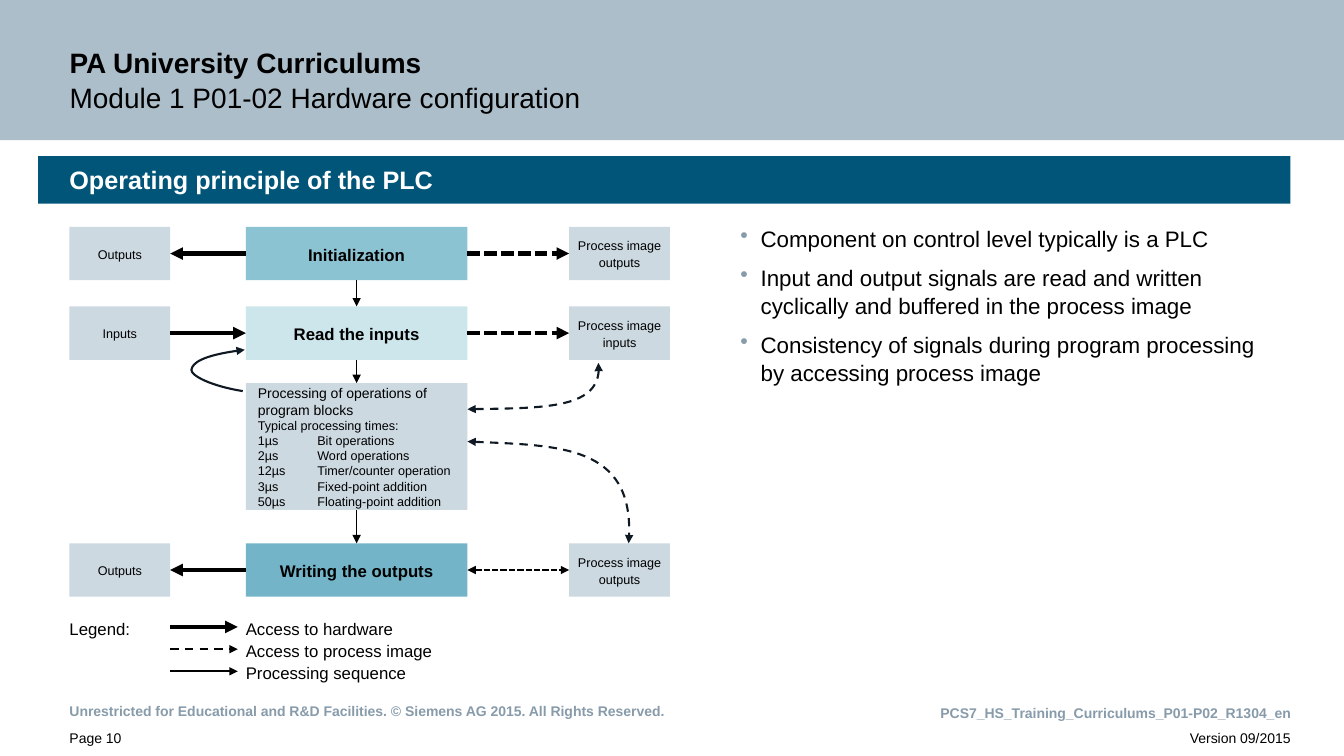
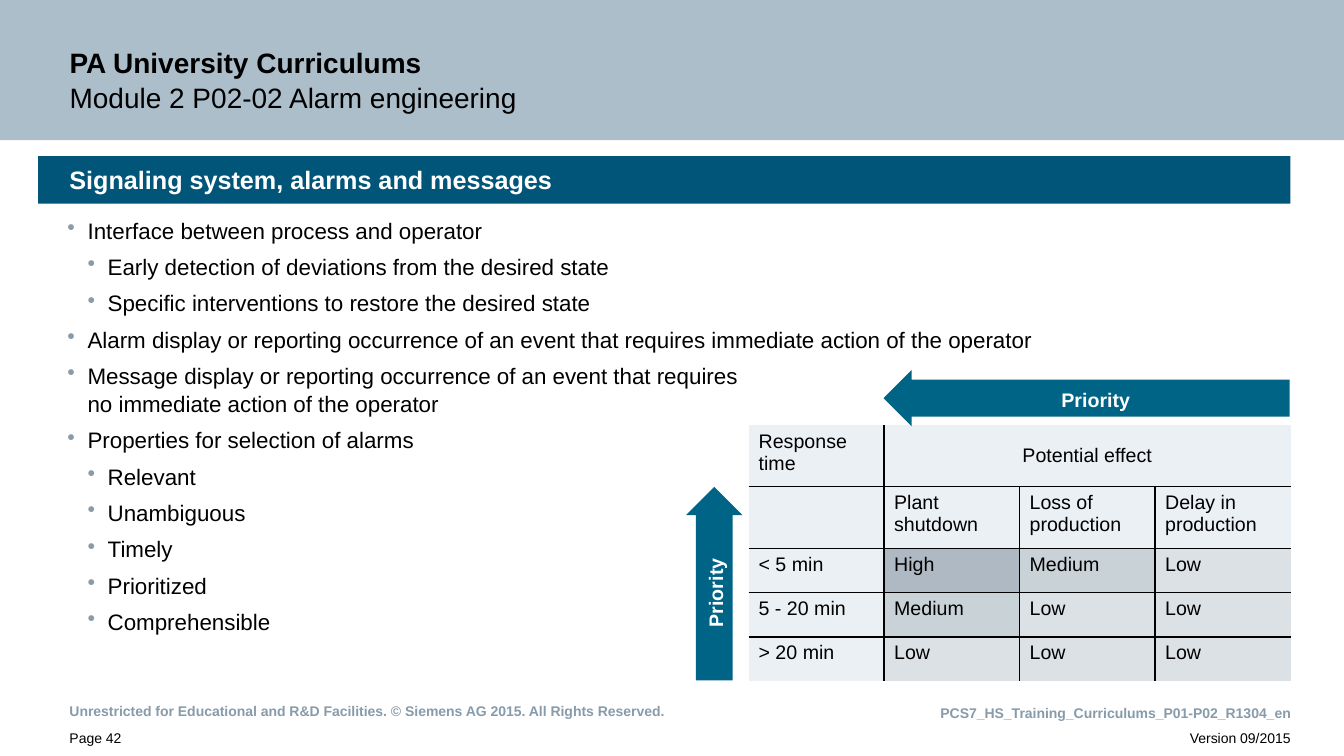
from dataclasses import dataclass, replace
from copy import deepcopy
from typing import NamedTuple, Optional

import lxml.etree
import pptx
import pptx.dml.color
import pptx.enum.dml
import pptx.enum.shapes
import pptx.enum.text
import pptx.oxml.ns
import pptx.util

Inches = pptx.util.Inches
Pt = pptx.util.Pt
RGB = pptx.dml.color.RGBColor
Align = pptx.enum.text.PP_ALIGN
Anchor = pptx.enum.text.MSO_ANCHOR
Preset = pptx.enum.shapes.MSO_SHAPE
Dash = pptx.enum.dml.MSO_LINE
qn = pptx.oxml.ns.qn

# Colours
BLACK, WHITE = RGB(0, 0, 0), RGB(255, 255, 255)
HEADER, BANNER = RGB(0xAD, 0xBE, 0xCB), RGB(0x00, 0x55, 0x78)
MUTED, PALE_BOX = RGB(0x87, 0x9B, 0xAA), RGB(0xCD, 0xD9, 0xE1)
INIT, READ, WRITE = RGB(0x8C, 0xC3, 0xD2), RGB(0xCD, 0xE6, 0xEB), RGB(0x73, 0xB4, 0xC8)
CURVE, ARROW = RGB(0x0F, 0x19, 0x23), RGB(0x00, 0x64, 0x87)
CELL = RGB(0xEB, 0xF0, 0xF5)
PRIORITY_FILL = {"High": RGB(0xAF, 0xB9, 0xC3), "Medium": RGB(0xC8, 0xD2, 0xD7),
                 "Low": RGB(0xDC, 0xE1, 0xE6)}

WIDTH, HEIGHT, HEADER_H = 13.34, 7.5, 1.39
BOX_INSETS = (0.12, 0.06, 0.12, 0.06)
NO_INSETS = (0, 0, 0, 0)
TOP, LEFT, BOTTOM, RIGHT = range(4)


@dataclass(frozen=True)
class Style:
    size: float
    color: RGB = BLACK
    bold: bool = False
    align: Align = Align.LEFT
    spacing: float = 1.0
    before: float = 0


class Bullet(NamedTuple):
    text: str
    level: int = 1


class Box(NamedTuple):
    name: str
    text: str
    at: tuple
    fill: RGB
    style: Style
    insets: tuple = BOX_INSETS


class Link(NamedTuple):
    begin: str
    begin_side: int
    end: str
    end_side: int
    width: float
    dash: Optional[Dash] = None
    both: bool = False


class Curve(NamedTuple):
    start: tuple
    points: tuple
    dash: Optional[Dash] = None
    both: bool = False


FOOTER = Style(10, spacing=1.1)
CREDIT = Style(10, MUTED, True)
STEP = Style(12, bold=True, align=Align.CENTER, spacing=1.1)
SIDE = replace(STEP, size=9, bold=False)
LEGEND = Style(12, spacing=1.1)
PRIORITY = Style(14, WHITE, True, Align.CENTER, 1.1)


# Text
def style_paragraph(p, style: Style) -> None:
    p.alignment, p.line_spacing = style.align, style.spacing
    p.space_before = Pt(style.before)
    for r in p.runs:
        r.font.name, r.font.size, r.font.bold = "Arial", Pt(style.size), style.bold
        r.font.color.rgb = style.color
    for br in p._p.findall(qn("a:br")):
        br.append(deepcopy(p.runs[0]._r.rPr))


def put_text(sp, text: str, style: Style, insets: tuple = NO_INSETS,
             anchor: Anchor = Anchor.TOP, wrap: bool = True):
    tf = sp.text_frame
    tf.text = text
    tf.word_wrap, tf.vertical_anchor = wrap, anchor
    tf.auto_size = pptx.enum.text.MSO_AUTO_SIZE.NONE
    tf.margin_left, tf.margin_top, tf.margin_right, tf.margin_bottom = map(Inches, insets)
    for p in tf.paragraphs:
        style_paragraph(p, style)
    return tf


def add_text(s, at: tuple, text: str, style: Style, **options):
    return put_text(s.shapes.add_textbox(*map(Inches, at)), text, style, **options)


def add_bullets(s, at: tuple, bullets: list, style: Style, insets: tuple) -> None:
    tf = add_text(s, at, "\n".join(b.text for b in bullets), style, insets=insets)
    tf.paragraphs[0].space_before = Pt(0)
    for p, bullet in zip(tf.paragraphs, bullets):
        p.level = bullet.level
        pPr = p._p.get_or_add_pPr()
        pPr.set("marL", str(Inches(0.2 * bullet.level)))
        pPr.set("indent", str(-Inches(0.2)))
        clr = lxml.etree.SubElement(pPr, qn("a:buClr"))
        lxml.etree.SubElement(clr, qn("a:srgbClr"), val=str(MUTED))
        lxml.etree.SubElement(pPr, qn("a:buChar"), char="•")


# Shapes and lines
def add_filled(s, at: tuple, fill: RGB, preset: Preset = Preset.RECTANGLE):
    sp = s.shapes.add_shape(preset, *map(Inches, at))
    sp.shadow.inherit = False
    sp.fill.solid()
    sp.fill.fore_color.rgb = fill
    sp.line.fill.background()
    return sp


def style_arrow(line, color: RGB, width: float, dash: Optional[Dash], both: bool) -> None:
    line.color.rgb, line.width = color, Pt(width)
    if dash is not None:
        line.dash_style = dash
    ln = line._get_or_add_ln()
    for end in ("a:headEnd", "a:tailEnd") if both else ("a:tailEnd",):
        lxml.etree.SubElement(ln, qn(end), type="triangle")


def add_arrow(s, start: tuple, end: tuple, width: float, dash: Optional[Dash] = None,
              both: bool = False):
    line = s.shapes.add_connector(pptx.enum.shapes.MSO_CONNECTOR.STRAIGHT,
                                  *map(Inches, start + end))
    style_arrow(line.line, BLACK, width, dash, both)
    lxml.etree.SubElement(line._element.spPr, qn("a:effectLst"))
    return line


def add_curve(s, curve: Curve) -> None:
    builder = s.shapes.build_freeform(*map(Inches, curve.start))
    builder.add_line_segments([tuple(map(Inches, pt)) for pt in curve.points], close=False)
    sp = builder.convert_to_shape()
    sp.shadow.inherit = False
    sp.fill.background()
    style_arrow(sp.line, CURVE, 1.5, curve.dash, curve.both)
    # Every three segments become the control points of one Bézier curve
    outline = sp._element.spPr.find(".//" + qn("a:path"))
    for i, segment in enumerate(outline.findall(qn("a:lnTo"))):
        if i % 3 == 0:
            bezier = lxml.etree.SubElement(outline, qn("a:cubicBezTo"))
        bezier.append(segment[0])
        outline.remove(segment)


# Frame shared by the slides
def add_slide(prs, module: str, heading: str, page: int):
    s = prs.slides.add_slide(prs.slide_layouts[5])
    title = s.shapes.title
    header_at = (0, 0, WIDTH, HEADER_H)
    title.left, title.top, title.width, title.height = map(Inches, header_at)
    tf = put_text(title, f"PA University Curriculums\v{module}", Style(20, bold=True, spacing=1.05),
                  (0.69, 0.43, 2.32, 0.26), Anchor.BOTTOM)
    tf.paragraphs[0].runs[1].font.bold = False
    band = add_filled(s, header_at, HEADER)
    title._element.addprevious(band._element)

    put_text(add_filled(s, (0.38, 1.55, 12.43, 0.47), BANNER), heading,
             Style(18, WHITE, True), (0.31, 0, 0.08, 0), Anchor.MIDDLE)

    add_text(s, (0, 6.74, WIDTH, 0.47),
             "Unrestricted for Educational and R&D Facilities. © Siemens AG 2015. "
             "All Rights Reserved.", CREDIT, insets=(0.69, 0.16, 3.51, 0), anchor=Anchor.MIDDLE)
    add_text(s, (9.3, 6.97, 3.51, 0.17), "PCS7_HS_Training_Curriculums_P01-P02_R1304_en",
             replace(CREDIT, align=Align.RIGHT, spacing=1.1), wrap=False)
    add_text(s, (0, 7.22, 1.93, 0.28), f"Page {page}", FOOTER, insets=(0.69, 0, 0, 0.13))
    add_text(s, (4.14, 7.22, 9.2, 0.28), "Version 09/2015",
             replace(FOOTER, align=Align.RIGHT), insets=(0, 0, 0.53, 0.13))
    return s


def build_plc_slide(prs) -> None:
    s = add_slide(prs, "Module 1 P01-02 Hardware configuration",
                  "Operating principle of the PLC", 10)
    add_bullets(s, (7.27, 2.02, 5.54, 2.03), [
        Bullet("Component on control level typically is a PLC"),
        Bullet("Input and output signals are read and written cyclically and buffered "
               "in the process image"),
        Bullet("Consistency of signals during program processing by accessing process image"),
    ], Style(16, spacing=1.04, before=8), (0.08, 0.2, 0.12, 0.12))

    # Flow boxes: hardware, step and process image in each row
    rows = [("init", 2.25, "Outputs", "Initialization", INIT, "outputs"),
            ("read", 3.04, "Inputs", "Read the inputs", READ, "inputs"),
            ("write", 5.39, "Outputs", "Writing the outputs", WRITE, "outputs")]
    boxes = []
    for name, y, hardware, step, fill, image in rows:
        boxes += [
            Box(name, step, (2.44, y, 2.2, 0.53), fill, STEP),
            Box(name + " hardware", hardware, (0.69, y, 1, 0.53), PALE_BOX, SIDE),
            Box(name + " image", f"Process image\v{image}", (5.65, y, 1, 0.53), PALE_BOX, SIDE,
                (0, 0.06, 0, 0.06)),
        ]
    boxes.append(Box("process", "Processing of operations of program blocks\n"
                     "Typical processing times:\n"
                     "1µs\tBit operations\n2µs\tWord operations\n12µs\tTimer/counter operation\n"
                     "3µs\tFixed-point addition\n50µs\tFloating-point addition",
                     (2.44, 3.8, 2.2, 1.26), PALE_BOX, Style(9)))
    shapes = {}
    for box in boxes:
        sp = shapes[box.name] = add_filled(s, box.at, box.fill)
        put_text(sp, box.text, box.style, box.insets, Anchor.MIDDLE)
    intro, _, *times = shapes["process"].text_frame.paragraphs
    intro.runs[0].font.size = Pt(10)
    for p in times:
        tabs = lxml.etree.SubElement(p._p.get_or_add_pPr(), qn("a:tabLst"))
        lxml.etree.SubElement(tabs, qn("a:tab"), pos=str(Inches(0.59)), algn="l")

    # Straight arrows between the boxes
    for link in [
        Link("init", LEFT, "init hardware", RIGHT, 3),
        Link("write", LEFT, "write hardware", RIGHT, 3),
        Link("read hardware", RIGHT, "read", LEFT, 3),
        Link("init", RIGHT, "init image", LEFT, 3, Dash.SQUARE_DOT),
        Link("read", RIGHT, "read image", LEFT, 3, Dash.SQUARE_DOT),
        Link("write", RIGHT, "write image", LEFT, 1.5, Dash.SQUARE_DOT, True),
        Link("init", BOTTOM, "read", TOP, 1),
        Link("read", BOTTOM, "process", TOP, 1),
        Link("process", BOTTOM, "write", TOP, 1),
    ]:
        line = add_arrow(s, (0, 0), (1, 1), link.width, link.dash, link.both)
        line.begin_connect(shapes[link.begin], link.begin_side)
        line.end_connect(shapes[link.end], link.end_side)

    # Curved arrows
    for curve in [
        Curve((2.41, 3.88), ((2.1, 3.83), (1.9, 3.73), (1.9, 3.67),
                             (1.91, 3.6), (2.02, 3.52), (2.43, 3.47))),
        Curve((4.64, 4.06), ((5.35, 4.05), (6, 4.05), (5.94, 3.6)), Dash.DASH, True),
        Curve((4.64, 4.38), ((5.51, 4.42), (6.32, 4.42), (6.24, 5.39)), Dash.DASH, True),
    ]:
        add_curve(s, curve)

    # Legend
    add_text(s, (0.69, 6.12, 0.6, 0.2), "Legend:", LEGEND, wrap=False)
    add_text(s, (2.44, 6.12, 1.87, 0.67),
             "Access to hardware\nAccess to process image\nProcessing sequence", LEGEND, wrap=False)
    for i, (width, dash) in enumerate([(3, None), (1.5, Dash.DASH), (1.5, None)]):
        y = 6.22 + 0.22 * i
        add_arrow(s, (1.69, y), (2.36, y), width, dash)


def add_border(cell, edge: str) -> None:
    ln = lxml.etree.SubElement(cell._tc.get_or_add_tcPr(), qn(edge), w=str(Pt(1)))
    fill = lxml.etree.SubElement(ln, qn("a:solidFill"))
    lxml.etree.SubElement(fill, qn("a:srgbClr"), val=str(BLACK))


def add_priority_table(s) -> None:
    rows = [("Response\vtime", "Potential effect", "", ""),
            ("", "Plant shutdown", "Loss of production", "Delay in\vproduction"),
            ("< 5 min", "High", "Medium", "Low"),
            ("5 - 20 min", "Medium", "Low", "Low"),
            ("> 20 min", "Low", "Low", "Low")]
    heights = (0.61, 0.61, 0.44, 0.44, 0.44)
    n_rows, n_cols = len(rows), len(rows[0])
    table = s.shapes.add_table(n_rows, n_cols, Inches(7.43), Inches(4.22),
                               Inches(5.38), Inches(sum(heights))).table
    no_style = "{2D5ABB26-0587-4C30-8999-92F81FD0307C}"
    table._tbl.tblPr.find(qn("a:tableStyleId")).text = no_style
    for row, height in zip(table.rows, heights):
        row.height = Inches(height)
    table.cell(0, 1).merge(table.cell(0, n_cols - 1))
    for r, texts in enumerate(rows):
        for c, text in enumerate(texts):
            cell = table.cell(r, c)
            inner = {"a:lnL": c > 0 and not cell.is_spanned,
                     "a:lnR": c + cell.span_width < n_cols and not cell.is_spanned,
                     "a:lnT": r > 0, "a:lnB": r < n_rows - 1}
            for edge, drawn in inner.items():
                if drawn:
                    add_border(cell, edge)
            cell.fill.solid()
            cell.fill.fore_color.rgb = PRIORITY_FILL.get(text, CELL)
            if text:
                cell.text = text
                style_paragraph(cell.text_frame.paragraphs[0], Style(14))
    effect = table.cell(0, 1)
    effect.vertical_anchor = Anchor.MIDDLE
    effect.text_frame.paragraphs[0].alignment = Align.CENTER


def build_alarm_slide(prs) -> None:
    s = add_slide(prs, "Module 2 P02-02 Alarm engineering",
                  "Signaling system, alarms and messages", 42)
    properties = ("Relevant", "Unambiguous", "Timely", "Prioritized", "Comprehensible")
    add_bullets(s, (0.36, 1.55, 12.43, 5.19), [
        Bullet("Interface between process and operator"),
        Bullet("Early detection of deviations from the desired state", 2),
        Bullet("Specific interventions to restore the desired state", 2),
        Bullet("Alarm display or reporting occurrence of an event that requires "
               "immediate action of the operator"),
        Bullet("Message display or reporting occurrence of an event that requires\v"
               "no immediate action of the operator"),
        Bullet("Properties for selection of alarms"),
        *(Bullet(text, 2) for text in properties),
    ], Style(16, spacing=1.04, before=6), (0.31, 0.59, 0.08, 0.04))
    add_priority_table(s)

    # Priority arrows along the table
    for preset, at, rotation in [(Preset.LEFT_ARROW, (8.77, 3.67, 4.03, 0.56), 0),
                                 (Preset.RIGHT_ARROW, (6.13, 5.51, 1.92, 0.56), 270)]:
        sp = add_filled(s, at, ARROW, preset)
        sp.adjustments[0], sp.adjustments[1] = 0.655, 0.5
        sp.rotation = rotation
        put_text(sp, "Priority", PRIORITY, BOX_INSETS, Anchor.MIDDLE)


def main() -> None:
    prs = pptx.Presentation()
    prs.slide_width, prs.slide_height = Inches(WIDTH), Inches(HEIGHT)
    build_plc_slide(prs)
    build_alarm_slide(prs)
    prs.save("out.pptx")


if __name__ == "__main__":
    main()
